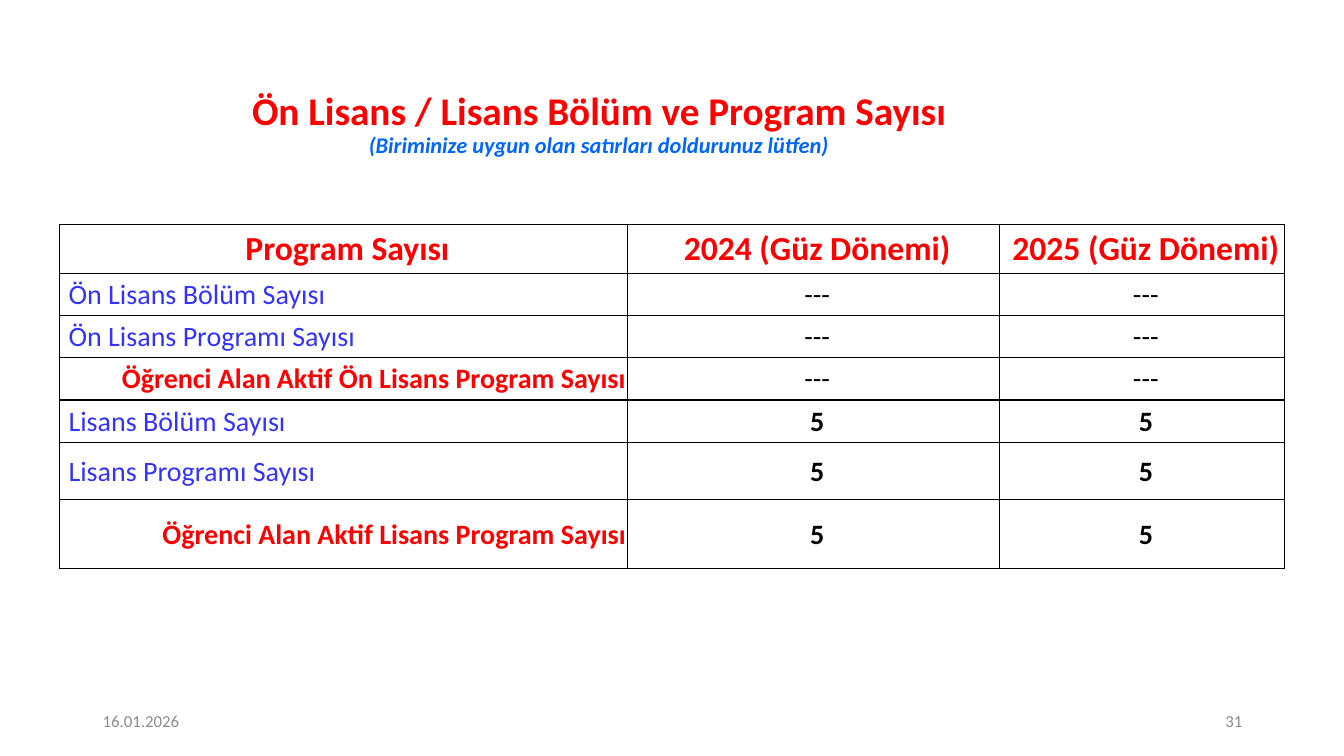
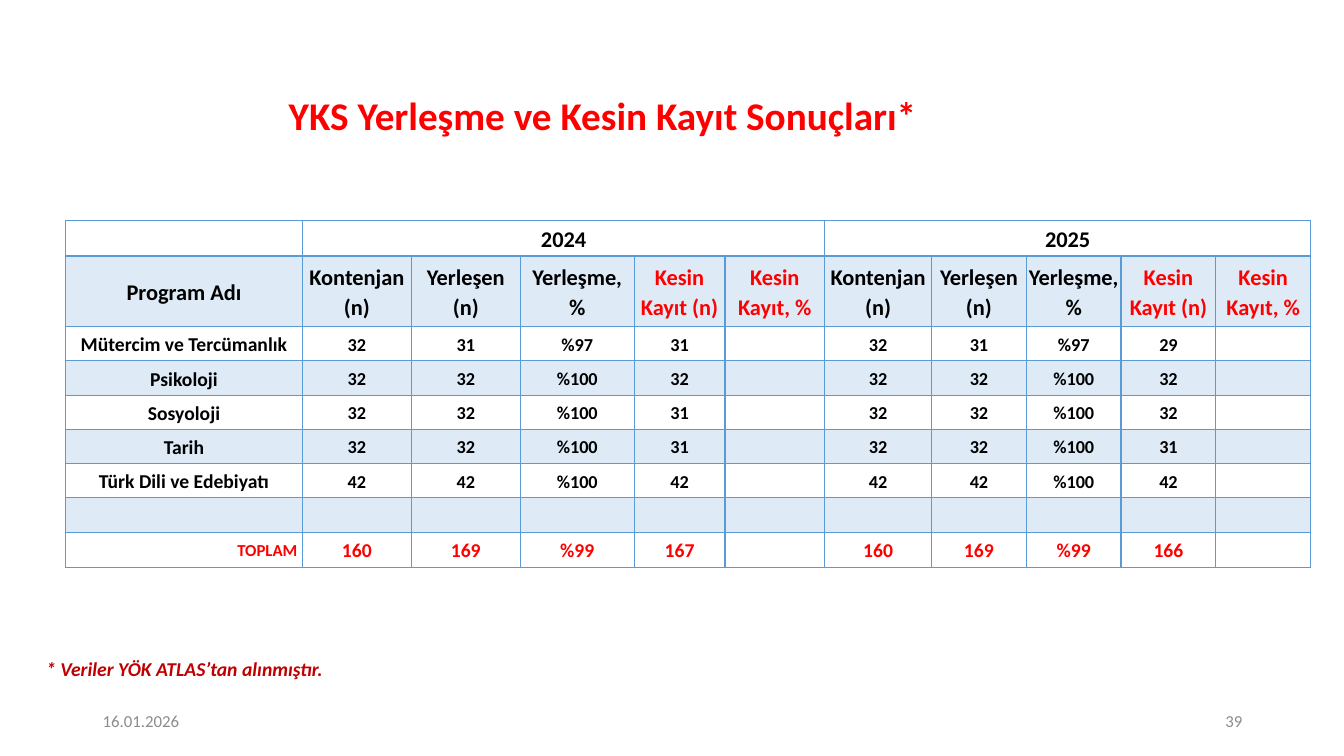
from lxml.etree import SubElement
from pptx import Presentation
from pptx.dml.color import RGBColor
from pptx.enum.text import MSO_ANCHOR, MSO_AUTO_SIZE, PP_ALIGN
from pptx.oxml.ns import qn
from pptx.util import Inches, Pt

FONT = "Calibri"
RED, BLACK, WHITE, GREY = "FF0000", "000000", "FFFFFF", "8C8C8C"
LABEL_BLUE, HINT_BLUE, NOTE_RED = "3333FF", "0066FF", "C00000"
GRID_BLUE, BAND_BLUE = "5B9BD5", "DEEBF7"
LEFT, CENTER, RIGHT = PP_ALIGN.LEFT, PP_ALIGN.CENTER, PP_ALIGN.RIGHT

DATE = "16.01.2026"

PROGRAM_HEAD = ["Program Sayısı", "2024 (Güz Dönemi)", "2025 (Güz Dönemi)"]
# label, 2024, 2025, is a subtotal
PROGRAM_ROWS = [
    ("Ön Lisans Bölüm Sayısı", "---", "---", False),
    ("Ön Lisans Programı Sayısı", "---", "---", False),
    ("Öğrenci Alan Aktif Ön Lisans Program Sayısı", "---", "---", True),
    ("Lisans Bölüm Sayısı", "5", "5", False),
    ("Lisans Programı Sayısı", "5", "5", False),
    ("Öğrenci Alan Aktif Lisans Program Sayısı", "5", "5", True),
]
PROGRAM_COLS = [5.63, 3.69, 2.83]
PROGRAM_HEIGHTS = [0.48] + [0.42] * 4 + [0.57, 0.68]

YEARS = ["2024", "2025"]
MEASURES = ["Kontenjan (n)", "Yerleşen (n)", "Yerleşme, %",
            "Kesin Kayıt (n)", "Kesin Kayıt, %"]
# program, values of 2024, values of 2025
ADMISSIONS = [
    ("Mütercim ve Tercümanlık", ["32", "31", "%97", "31", ""], ["32", "31", "%97", "29", ""]),
    ("Psikoloji", ["32", "32", "%100", "32", ""], ["32", "32", "%100", "32", ""]),
    ("Sosyoloji", ["32", "32", "%100", "31", ""], ["32", "32", "%100", "32", ""]),
    ("Tarih", ["32", "32", "%100", "31", ""], ["32", "32", "%100", "31", ""]),
    ("Türk Dili ve Edebiyatı", ["42", "42", "%100", "42", ""], ["42", "42", "%100", "42", ""]),
    ("", [""] * 5, [""] * 5),
    ("TOPLAM", ["160", "169", "%99", "167", ""], ["160", "169", "%99", "166", ""]),
]
ADMISSION_COLS = [2.35, 1.08, 1.08, 1.13, 0.9, 0.99, 1.06] + [0.94] * 4
ADMISSION_HEIGHTS = [0.35, 0.7] + [0.34] * 6 + [0.35]


def rgb(color):
    return RGBColor.from_string(color)


def write(p, text, size, color=BLACK, bold=False, italic=False, align=LEFT, spacing=None):
    p.alignment = align
    if spacing:
        p.line_spacing = spacing
    r = p.add_run()
    r.text = text
    f = r.font
    f.name, f.size, f.bold, f.italic = FONT, Pt(size), bold, italic
    f.color.rgb = rgb(color)


def add_text(s, box, text, size, anchor=MSO_ANCHOR.TOP, **fmt):
    tf = s.shapes.add_textbox(*map(Inches, box)).text_frame
    tf.word_wrap = True
    tf.vertical_anchor = anchor
    write(tf.paragraphs[0], text, size, **fmt)


def add_slide(prs, box, title, number, hint=None):
    """Add a slide with the shared title, date and slide number."""
    s = prs.slides.add_slide(prs.slide_layouts[5])
    shape = s.shapes.title
    shape.left, shape.top, shape.width, shape.height = map(Inches, box)
    tf = shape.text_frame
    tf.auto_size = MSO_AUTO_SIZE.NONE
    tf.vertical_anchor = MSO_ANCHOR.MIDDLE
    p = tf.paragraphs[0]
    write(p, title, 28, color=RED, bold=True, align=CENTER, spacing=0.9)
    if hint:
        p.add_line_break()
        write(p, hint, 16, color=HINT_BLUE, bold=True, italic=True, align=CENTER)
    for left, text, align in ((0.92, DATE, LEFT), (9.42, number, RIGHT)):
        add_text(s, (left, 6.95, 3, 0.4), text, 12, anchor=MSO_ANCHOR.MIDDLE,
                 color=GREY, align=align)
    return s


def add_grid(s, left, top, cols, heights):
    """Add an unstyled table with the given column widths and row heights."""
    table = s.shapes.add_table(len(heights), len(cols), Inches(left), Inches(top),
                               Inches(sum(cols)), Inches(sum(heights))).table
    table.first_row = table.horz_banding = False
    for col, width in zip(table.columns, cols):
        col.width = Inches(width)
    for row, height in zip(table.rows, heights):
        row.height = Inches(height)
    return table


def fill_cell(cell, text, line, size, fill=WHITE, left=0, right=0, **fmt):
    cell.margin_left, cell.margin_right = Inches(left), Inches(right)
    cell.margin_top, cell.margin_bottom = Inches(0.01), 0
    cell.vertical_anchor = MSO_ANCHOR.MIDDLE
    for side in ("L", "R", "T", "B"):
        ln = SubElement(cell._tc.get_or_add_tcPr(), qn(f"a:ln{side}"), w=str(Pt(1)))
        SubElement(SubElement(ln, qn("a:solidFill")), qn("a:srgbClr"), val=line)
    cell.fill.solid()
    cell.fill.fore_color.rgb = rgb(fill)
    if text:
        write(cell.text_frame.paragraphs[0], text, size, **fmt)


def add_program_table(s):
    table = add_grid(s, 0.59, 2.23, PROGRAM_COLS, PROGRAM_HEIGHTS)

    def put(row, col, text, size=20, **fmt):
        fill_cell(table.cell(row, col), text, BLACK, size, left=0.09, right=0.01, **fmt)

    for col, text in enumerate(PROGRAM_HEAD):
        put(0, col, text, 24, color=RED, bold=True, align=CENTER)
    for row, (label, *values, subtotal) in enumerate(PROGRAM_ROWS, 1):
        put(row, 0, label, color=RED if subtotal else LABEL_BLUE, bold=subtotal,
            align=RIGHT if subtotal else LEFT)
        for col, value in enumerate(values, 1):
            put(row, col, value, bold=value.isdigit(), align=CENTER)


def add_admission_table(s):
    table = add_grid(s, 0.65, 2.19, ADMISSION_COLS, ADMISSION_HEIGHTS)
    n = len(MEASURES)
    rows = [[""] + [text for year in YEARS for text in [year] + [""] * (n - 1)],
            ["Program Adı"] + MEASURES * len(YEARS)]
    rows += [[name] + first + second for name, first, second in ADMISSIONS]
    last = len(rows) - 1

    for i, row in enumerate(rows):
        for j, text in enumerate(row):
            if i < 2:
                size = 16
            elif i == last:
                size = 14 if j else 12
            else:
                size = 13 if j else 14
            inset = 0.05 if j <= n else 0
            red = i == last or text.startswith("Kesin")
            fill_cell(table.cell(i, j), text, GRID_BLUE, size,
                      fill=BAND_BLUE if i % 2 else WHITE, left=inset, right=inset,
                      color=RED if red else BLACK, bold=True, spacing=1.07,
                      align=RIGHT if i == last and j == 0 else CENTER)
    for k in range(len(YEARS)):
        table.cell(0, 1 + k * n).merge(table.cell(0, (k + 1) * n))


def main():
    prs = Presentation()
    prs.slide_width, prs.slide_height = Inches(13.33), Inches(7.5)

    s = add_slide(prs, (0.14, 0.84, 11.6, 0.8),
                  "Ön Lisans / Lisans Bölüm ve Program Sayısı", "31",
                  hint="(Biriminize uygun olan satırları doldurunuz lütfen)")
    add_program_table(s)

    s = add_slide(prs, (0.16, 0.82, 11.63, 0.7),
                  "YKS Yerleşme ve Kesin Kayıt Sonuçları*", "39")
    add_text(s, (0.36, 6.47, 6.3, 0.34), "* Veriler YÖK ATLAS’tan alınmıştır.", 14,
             color=NOTE_RED, bold=True, italic=True)
    add_admission_table(s)

    prs.save("out.pptx")


if __name__ == "__main__":
    main()
